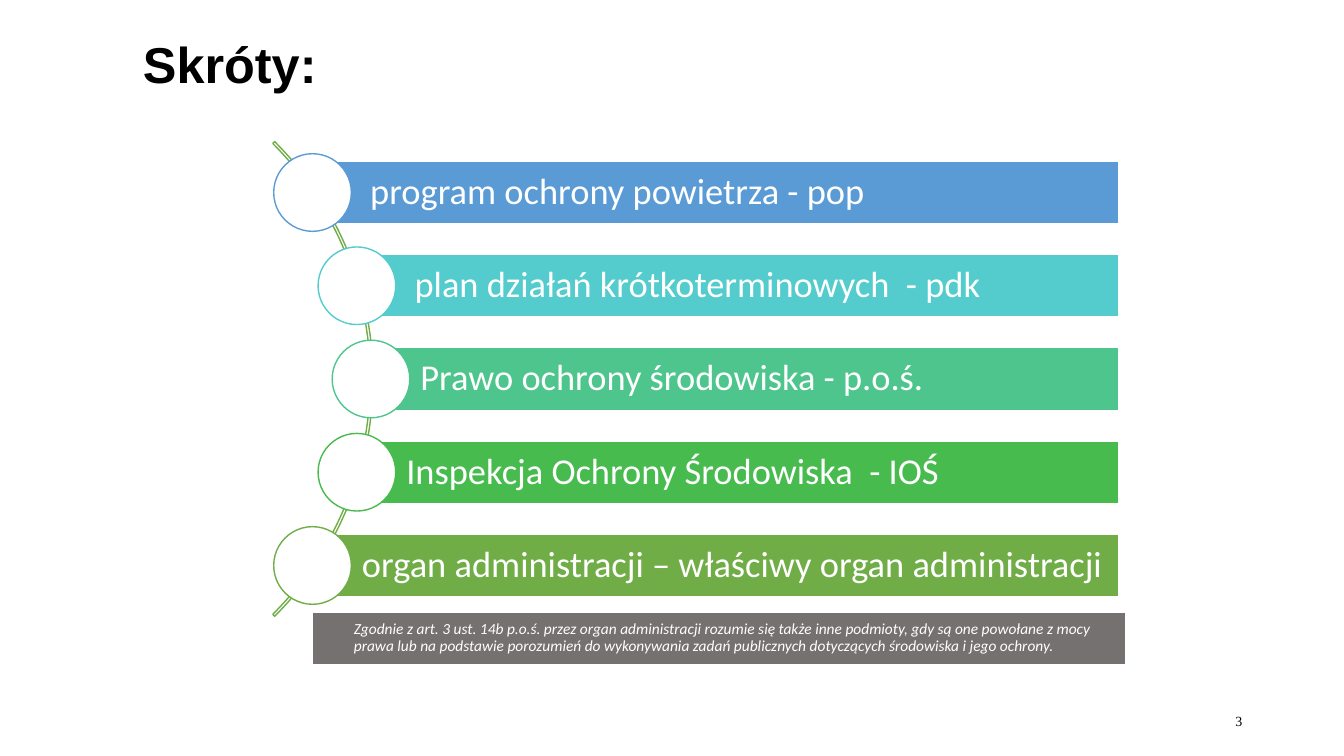
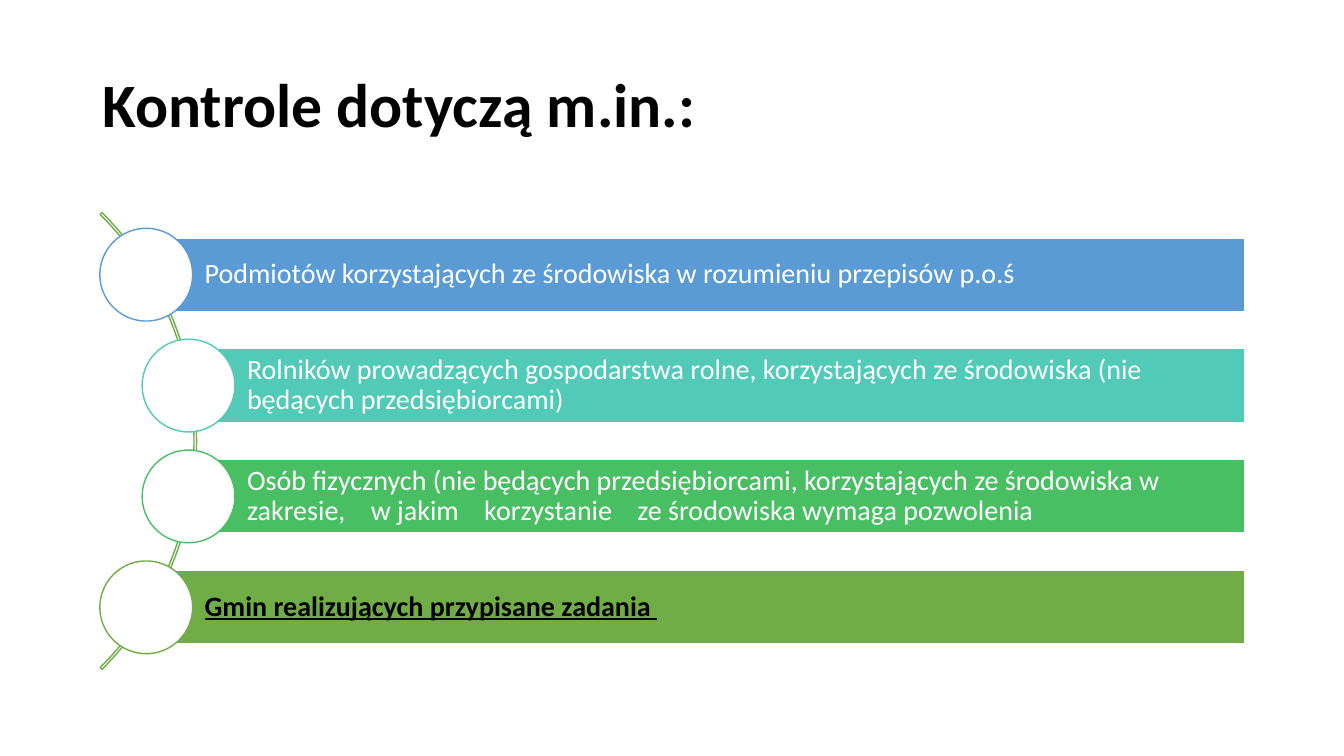
import pptx
import pptx.dml.color
import pptx.enum.shapes
import pptx.enum.text
import pptx.util
from pptx.util import Inches

BLACK, WHITE, GREY = "000000", "FFFFFF", "767171"
BLUE, OLIVE = "5B9BD5", "70AD47"
BODY_FONT = "Calibri"
SHAPE = pptx.enum.shapes.MSO_SHAPE
ALIGN = pptx.enum.text.PP_ALIGN
ANCHOR = pptx.enum.text.MSO_ANCHOR


def color(hex_text):
    return pptx.dml.color.RGBColor.from_string(hex_text)


def write(shape, text, size, ink=BLACK, font=BODY_FONT, insets=(0.1, 0.05, 0.1, 0.05),
          anchor=ANCHOR.MIDDLE, align=ALIGN.LEFT, line_spacing=0.9, **style):
    """Put one run of text in a shape; style may hold bold, italic, underline."""
    frame = shape.text_frame
    frame.word_wrap = True
    frame.vertical_anchor = anchor
    (frame.margin_left, frame.margin_top,
     frame.margin_right, frame.margin_bottom) = map(Inches, insets)
    paragraph = frame.paragraphs[0]
    paragraph.alignment = align
    paragraph.line_spacing = line_spacing
    run = paragraph.add_run()
    run.text = text
    run.font.name = font
    run.font.size = pptx.util.Pt(size)
    run.font.color.rgb = color(ink)
    for name, value in style.items():
        setattr(run.font, name, value)


def add_text(slide, box, text, size, **options):
    write(slide.shapes.add_textbox(*map(Inches, box)), text, size, **options)


def add_shape(shapes, kind, box, line, fill=None):
    shape = shapes.add_shape(kind, *map(Inches, box))
    shape.shadow.inherit = False
    if fill:
        shape.fill.solid()
        shape.fill.fore_color.rgb = color(fill)
    else:
        shape.fill.background()
    shape.line.color.rgb = color(line)
    shape.line.width = pptx.util.Pt(1)
    return shape


def add_bar(shapes, box, fill, text, size, left_inset, inset, **style):
    bar = add_shape(shapes, SHAPE.RECTANGLE, box, WHITE, fill)
    write(bar, text, size, insets=(left_inset, inset, inset, inset), **style)


def add_arc_list(slide, items, first_top, last_top, right, bar_height, circle,
                 arc_left, arc_size, size, left_inset, inset):
    """Draw bars that start at circles strung along an arc.

    Each item is (bar left, colour, text, text style).
    """
    shapes = slide.shapes.add_group_shape().shapes
    step = (last_top - first_top) / (len(items) - 1)
    middle = (first_top + last_top + bar_height) / 2

    # Thin arc behind the bars, from -45 to 45 degrees
    arc = add_shape(shapes, SHAPE.BLOCK_ARC,
                    (arc_left, middle - arc_size / 2, arc_size, arc_size), OLIVE)
    for index, value in enumerate((189, 27, 0.004)):
        arc.adjustments[index] = value

    # Bars, each with a circle centred on its left end
    for row, (left, fill, text, style) in enumerate(items):
        top = first_top + row * step
        add_bar(shapes, (left, top, right - left, bar_height), fill, text, size,
                left_inset, inset, **style)
        add_shape(shapes, SHAPE.OVAL,
                  (left - circle / 2, top + (bar_height - circle) / 2, circle, circle),
                  fill, WHITE)


def add_abbreviations(slide):
    light = {"ink": WHITE}
    add_arc_list(slide, [
        (3.1, BLUE, " program ochrony powietrza - pop", light),
        (3.54, "54CCCD", " plan działań krótkoterminowych  - pdk", light),
        (3.68, "4DC58D", "Prawo ochrony środowiska - p.o.ś.", light),
        (3.54, "48BB4F", "Inspekcja Ochrony Środowiska  - IOŚ", light),
        (3.1, OLIVE, "organ administracji – właściwy organ administracji", light),
    ], first_top=1.6, last_top=5.3, right=11.1, bar_height=0.62, circle=0.77,
        arc_left=-2.96, arc_size=6.66, size=26, left_inset=0.49, inset=0.07)

    # Slide number, title and explanatory note
    add_text(slide, (9.42, 6.95, 3, 0.4), "3", 10, font="Times New Roman",
             align=ALIGN.RIGHT, line_spacing=1)
    add_text(slide, (1.32, 0.28, 1.96, 1.01), "Skróty:", 36, font="Arial",
             anchor=ANCHOR.TOP, line_spacing=1, bold=True)
    add_bar(slide.shapes, (3.1, 6.07, 8.07, 0.52), GREY,
            "Zgodnie z art. 3 ust. 14b p.o.ś. przez organ administracji rozumie się "
            "także inne podmioty, gdy są one powołane z mocy prawa lub na podstawie "
            "porozumień do wykonywania zadań publicznych dotyczących środowiska "
            "i jego ochrony.", 11, 0.41, 0.03, ink=WHITE, italic=True)


def add_inspections(slide):
    light = {"ink": WHITE}
    add_text(slide, (0.92, 0.34, 11.5, 1.45), "Kontrole dotyczą m.in.:", 44, bold=True)
    add_arc_list(slide, [
        (1.45, BLUE,
         "Podmiotów korzystających ze środowiska w rozumieniu przepisów p.o.ś", light),
        (1.87, "52CAB8",
         "Rolników prowadzących gospodarstwa rolne, korzystających ze środowiska "
         "(nie będących przedsiębiorcami)", light),
        (1.87, "49BF64",
         "Osób fizycznych (nie będących przedsiębiorcami, korzystających ze środowiska "
         "w zakresie,    w jakim    korzystanie    ze środowiska wymaga pozwolenia", light),
        (1.45, OLIVE, "Gmin realizujących przypisane zadania ",
         {"bold": True, "underline": True}),
    ], first_top=2.36, last_top=5.66, right=12.35, bar_height=0.73, circle=0.92,
        arc_left=-4.46, arc_size=6.41, size=20, left_inset=0.58, inset=0.06)


def main():
    presentation = pptx.Presentation()
    presentation.slide_width = Inches(13.33)
    presentation.slide_height = Inches(7.5)
    for build in (add_abbreviations, add_inspections):
        build(presentation.slides.add_slide(presentation.slide_layouts[6]))
    presentation.save("out.pptx")


if __name__ == "__main__":
    main()
